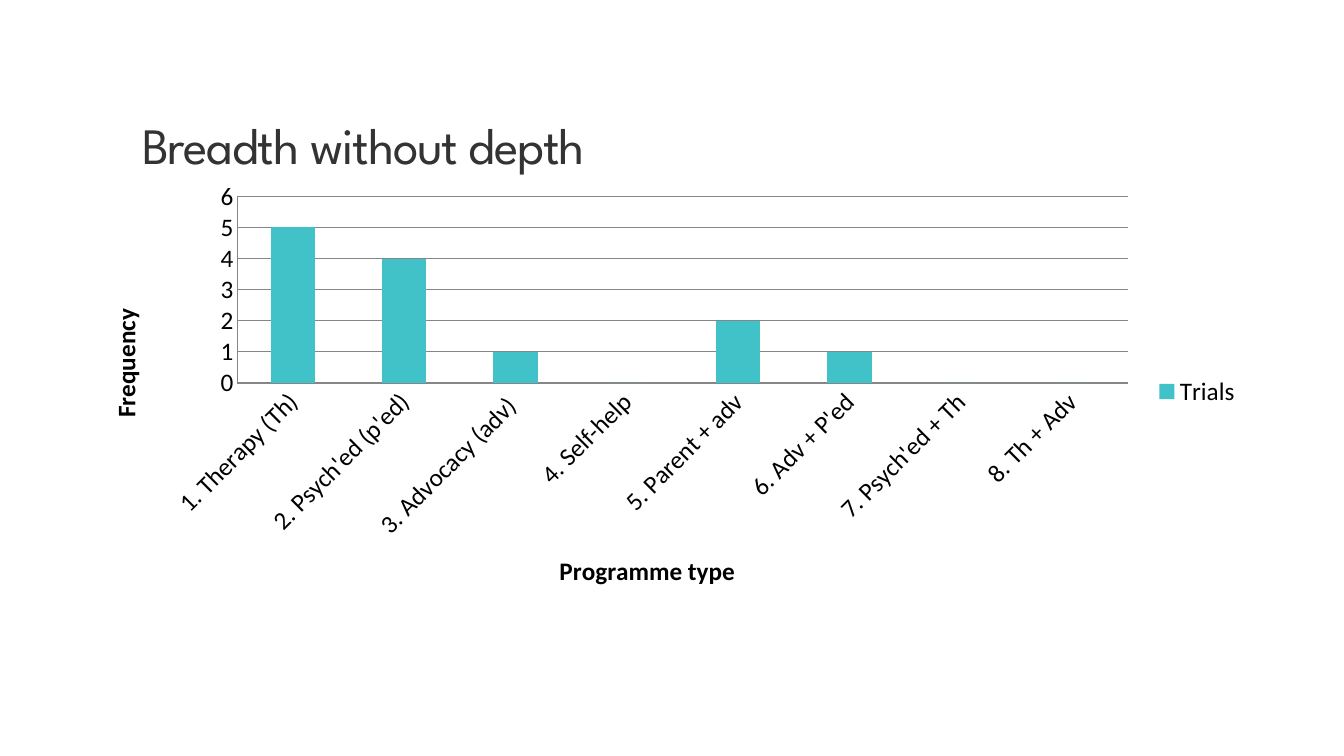
from pptx import Presentation
from pptx.chart.data import CategoryChartData
from pptx.dml.color import RGBColor
from pptx.enum.chart import XL_CHART_TYPE, XL_LEGEND_POSITION, XL_TICK_MARK
from pptx.enum.text import MSO_AUTO_SIZE
from pptx.util import Pt

TEAL = RGBColor(0x40, 0xC2, 0xC8)
DARK = RGBColor(0x33, 0x33, 0x33)
BLACK = RGBColor(0, 0, 0)
GREY = RGBColor(0x86, 0x86, 0x86)

prs = Presentation()
prs.slide_width, prs.slide_height = Pt(960), Pt(540)
s = prs.slides.add_slide(prs.slide_layouts[6])

# Title
tf = s.shapes.add_textbox(Pt(100.8), Pt(81.4), Pt(394.6), Pt(45.4)).text_frame
box_format = {"margin_left": 0, "margin_top": 0, "margin_right": 0,
              "margin_bottom": 0, "word_wrap": True,
              "auto_size": MSO_AUTO_SIZE.SHAPE_TO_FIT_TEXT}
for name, value in box_format.items():
    setattr(tf, name, value)
p = tf.paragraphs[0]
p._p.get_or_add_pPr().set("marL", str(Pt(0.72)))
r = p.add_run()
r.text = "Breadth without depth"
for name, value in {"name": "League Spartan", "size": Pt(36.4)}.items():
    setattr(r.font, name, value)
r.font.color.rgb = DARK
r._r.get_or_add_rPr().set("spc", "-80")

# Trials by programme type
trials = {
    "1. Therapy (Th)": 5,
    "2. Psych'ed (p'ed)": 4,
    "3. Advocacy (adv) ": 1,
    "4. Self-help": 0,
    "5. Parent + adv": 2,
    "6. Adv + P'ed": 1,
    "7. Psych'ed + Th": 0,
    "8. Th + Adv": 0,
}
data = CategoryChartData(number_format="General")
data.categories = list(trials)
data.add_series("Trials ", list(trials.values()))
chart = s.shapes.add_chart(XL_CHART_TYPE.COLUMN_CLUSTERED, Pt(61.2), Pt(123.1),
                           Pt(836.6), Pt(313.2), data).chart
chart.has_title = False
for name, value in {"name": "Calibri", "size": Pt(18)}.items():
    setattr(chart.font, name, value)
chart.font.color.rgb = BLACK

# Columns
plot = chart.plots[0]
plot.gap_width = 150
plot.vary_by_categories = False
fill = plot.series[0].format.fill
fill.solid()
fill.fore_color.rgb = TEAL

# Axes
axes = {"Programme type ": chart.category_axis, "Frequency ": chart.value_axis}
for title, axis in axes.items():
    axis.major_tick_mark = axis.minor_tick_mark = XL_TICK_MARK.NONE
    axis.format.line.color.rgb = GREY
    axis.format.line.width = Pt(0.75)
    r = axis.axis_title.text_frame.paragraphs[0].add_run()
    r.text = title
    for name, value in {"name": "Calibri", "size": Pt(18), "bold": True}.items():
        setattr(r.font, name, value)
    r.font.color.rgb = BLACK
chart.value_axis.minimum_scale = 0
chart.value_axis.maximum_scale = 6
chart.value_axis.major_unit = 1
grid = chart.value_axis.major_gridlines.format.line
grid.color.rgb = GREY
grid.width = Pt(0.75)

# Legend
chart.has_legend = True
chart.legend.position = XL_LEGEND_POSITION.RIGHT
chart.legend.include_in_layout = False

prs.save("out.pptx")
